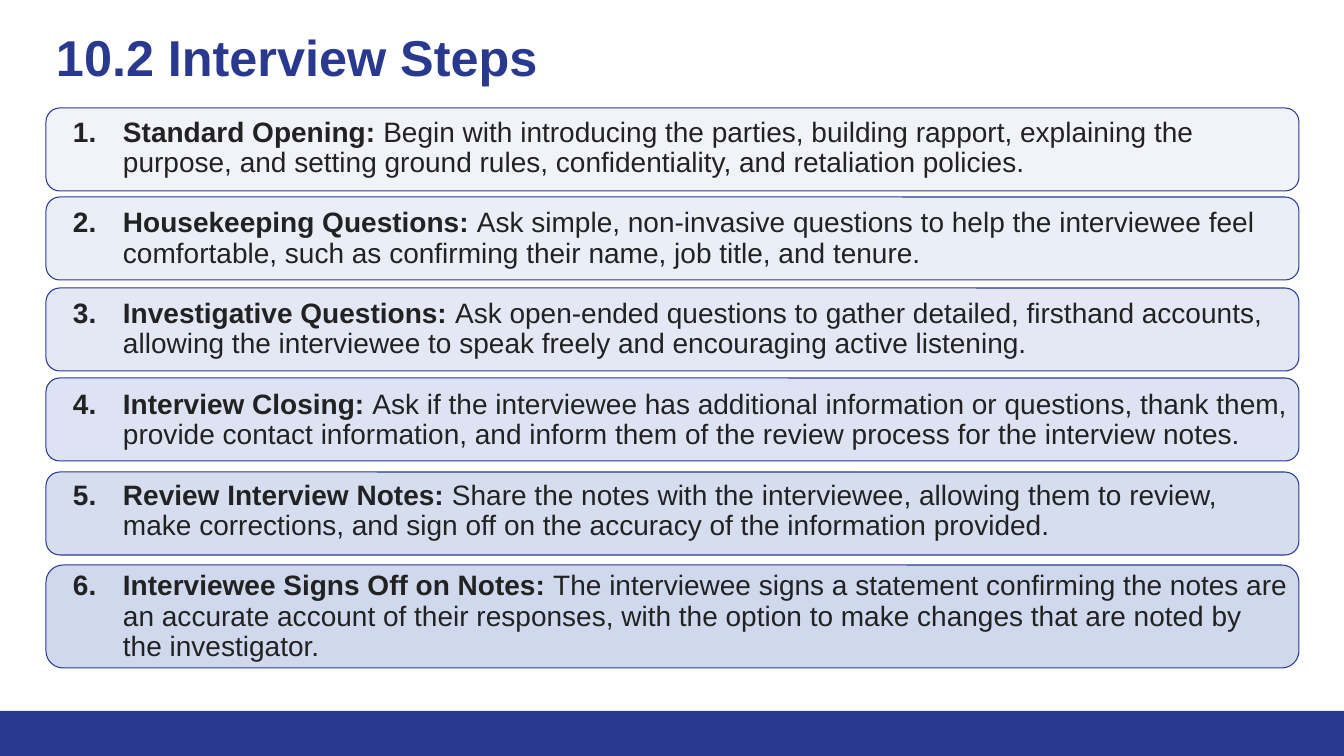
from pptx import Presentation
from pptx.dml.color import RGBColor
from pptx.enum.shapes import MSO_SHAPE as Shape
from pptx.enum.text import MSO_ANCHOR as Anchor, MSO_AUTO_SIZE as Fit, PP_ALIGN as Align
from pptx.oxml.ns import qn
from pptx.util import Pt
from lxml.etree import SubElement as Sub

HEAD = "10.2 Interview Steps"
STEPS = [
    ("Standard Opening: ", "Begin with introducing the parties, building rapport, explaining the purpose, and setting ground rules, confidentiality, and retaliation policies."),
    ("Housekeeping Questions: ", "Ask simple, non-invasive questions to help the interviewee feel comfortable, such as confirming their name, job title, and tenure."),
    ("Investigative Questions: ", "Ask open-ended questions to gather detailed, firsthand accounts, allowing the interviewee to speak freely and encouraging active listening."),
    ("Interview Closing: ", "Ask if the interviewee has additional information or questions, thank them, provide contact information, and inform them of the review process for the interview notes."),
    ("Review Interview Notes: ", "Share the notes with the interviewee, allowing them to review, make corrections, and sign off on the accuracy of the information provided."),
    ("Interviewee Signs Off on Notes: ", "The interviewee signs a statement confirming the notes are an accurate account of their responses, with the option to make changes that are noted by the investigator."),
]
CARDS = [(108, 83), (197, 83), (288, 83), (378, 83), (472, 83), (565, 103)]
NAVY, TINT, INK = "2A3990", "7890CD", "222222"
LEFT, WIDE = 46, 1253


def px(n):
    return round(n * 914400 / 100.8)


def paint(hue):
    return RGBColor.from_string(hue)


def add(kind, x, y, w, h, hue):
    shape = slide.shapes.add_shape(kind, px(x), px(y), px(w), px(h))
    shape.shadow.inherit = False
    shape.fill.solid()
    shape.fill.fore_color.rgb = paint(hue)
    return shape


def place(box, y, h, anchor):
    box.left, box.top, box.width, box.height = px(LEFT), px(y), px(WIDE), px(h)
    frame = box.text_frame
    frame.word_wrap = True
    frame.auto_size = Fit.NONE
    frame.vertical_anchor = anchor
    frame.margin_left = frame.margin_right = px(10)
    frame.margin_top = frame.margin_bottom = px(10)
    return frame


def style(para, size, hue):
    para.alignment = Align.LEFT
    para.line_spacing = 0.9
    para.font.name = "Arial"
    para.font.size = Pt(size)
    para.font.color.rgb = paint(hue)


deck = Presentation()
deck.slide_width, deck.slide_height = px(1344), px(756)
slide = deck.slides.add_slide(deck.slide_layouts[1])
title, body = slide.placeholders

bar = add(Shape.RECTANGLE, 0, 711, 1344, 45, NAVY)
bar.line.fill.background()

para = place(title, 24, 72, Anchor.MIDDLE).paragraphs[0]
para.text = HEAD
style(para, 36, NAVY)
para.font.bold = True

for i, (y, h) in enumerate(CARDS):
    card = add(Shape.ROUNDED_RECTANGLE, LEFT, y, WIDE, h, TINT)
    card.line.color.rgb = paint(NAVY)
    card.line.width = Pt(0.75)
    tone = card.fill._xPr.find(qn("a:solidFill"))[0]
    Sub(tone, qn("a:alpha"), val=str((10 + 5 * i) * 1000))

frame = place(body, 108, 582, Anchor.TOP)
for i, (name, text) in enumerate(STEPS):
    para = frame.paragraphs[0] if i == 0 else frame.add_paragraph()
    props = para._p.get_or_add_pPr()
    props.set("marL", str(px(67)))
    props.set("indent", str(-px(50)))
    Sub(props, qn("a:buFont"), typeface="+mj-lt")
    Sub(props, qn("a:buAutoNum"), type="arabicPeriod")
    style(para, 20, INK)
    para.space_before = Pt(21.6 if i else 0)
    for part, bold in ((name, True), (text, False)):
        run = para.add_run()
        run.text = part
        run.font.bold = bold

slide.shapes._spTree.append(body._element)
deck.save("out.pptx")
